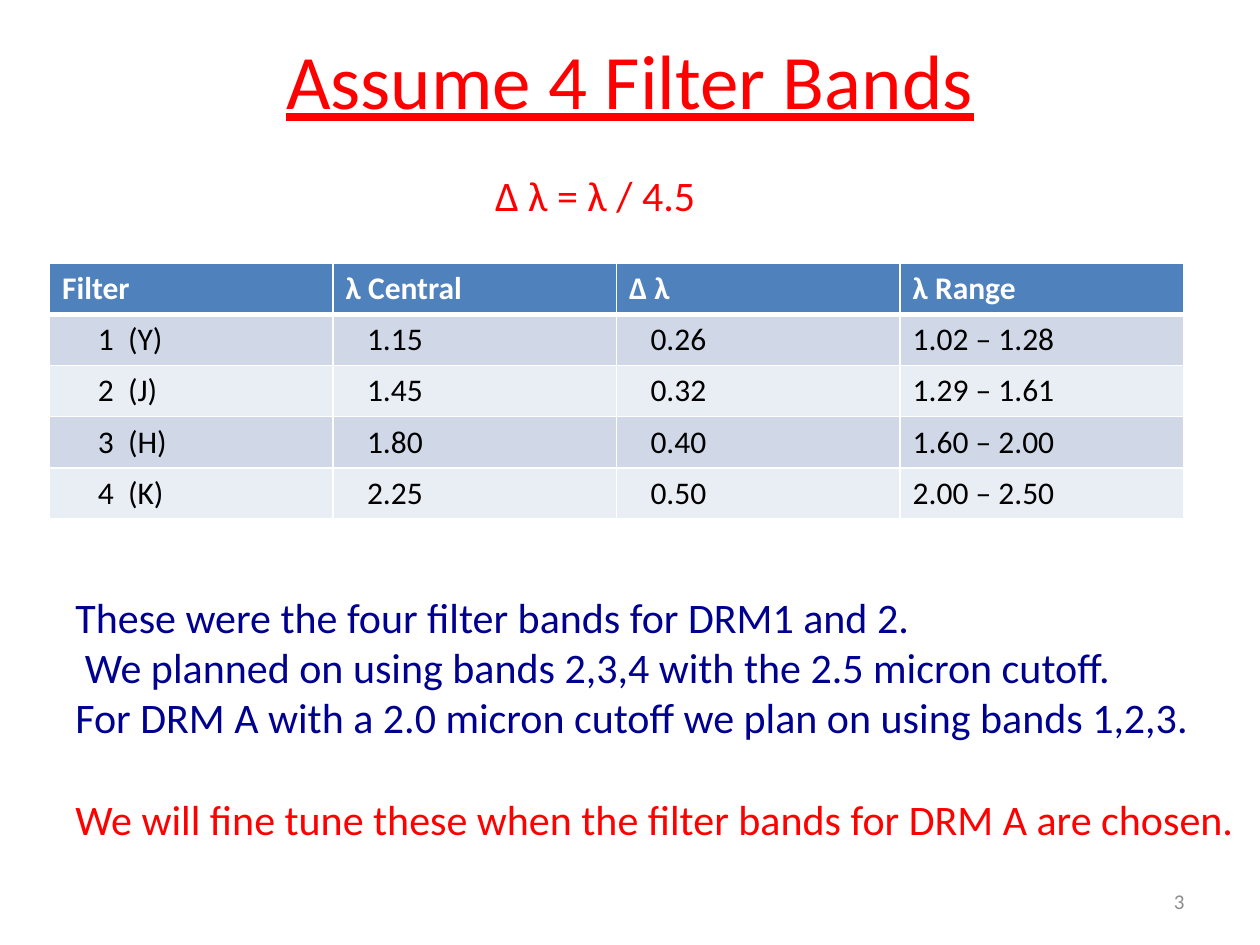
from dataclasses import dataclass

from lxml.etree import SubElement
from pptx import Presentation
from pptx.dml.color import RGBColor
from pptx.enum.text import MSO_ANCHOR, PP_ALIGN
from pptx.oxml.ns import qn
from pptx.util import Cm, Pt


@dataclass(frozen=True)
class Theme:
    """Colours, font and type sizes of the slide."""
    font: str = "Calibri"
    red: str = "FF0000"
    navy: str = "000090"
    grey: str = "8C8C8C"
    black: str = "000000"
    white: str = "FFFFFF"
    header: str = "4F81BD"
    bands: tuple = ("D0D8E8", "E9EDF4")
    title: int = 44
    body: int = 24
    cell: int = 18
    small: int = 12


THEME = Theme()
HEADINGS = ("Filter", "λ Central", "Δ λ", "λ Range")
FILTERS = (
    ("1  (Y)", "1.15", "0.26", "1.02 – 1.28"),
    ("2  (J)", "1.45", "0.32", "1.29 – 1.61"),
    ("3  (H)", "1.80", "0.40", "1.60 – 2.00"),
    ("4  (K)", "2.25", "0.50", "2.00 – 2.50"),
)
INDENTS = (0.72, 0.43, 0.43, 0)
NOTES = (
    ("These were the four filter bands for DRM1 and 2.", THEME.navy, 0, 0),
    ("We planned on using bands 2,3,4 with the 2.5 micron cutoff.", THEME.navy, 0.19, 0),
    ("For DRM A with a 2.0 micron cutoff we plan on using bands 1,2,3.", THEME.navy, 0, 0),
    ("We will fine tune these when the filter bands for DRM A are chosen.", THEME.red, 0, 29.3),
)


def write(p, text, size, color, bold=False, indent=0):
    """Fill a paragraph with one formatted, optionally indented run."""
    p.text = text
    font = p.runs[0].font
    font.name, font.size, font.bold = THEME.font, Pt(size), bold
    font.color.rgb = RGBColor.from_string(color)
    if indent:
        pPr = p._p.get_or_add_pPr()
        pPr.set("marL", str(Cm(indent)))
        pPr.set("indent", "0")


def add_title(s, text):
    """Place and format the title placeholder."""
    sp = s.shapes.title
    sp.left, sp.top, sp.width, sp.height = Cm(1.27), Cm(0), Cm(22.86), Cm(3.17)
    tf = sp.text_frame
    tf.vertical_anchor = MSO_ANCHOR.MIDDLE
    p = tf.paragraphs[0]
    write(p, text, THEME.title, THEME.red)
    p.alignment = PP_ALIGN.CENTER
    p.runs[0].font.underline = True


def add_text(s, left, top, width, height, wrap=False):
    """Add a text box and return its text frame."""
    tf = s.shapes.add_textbox(Cm(left), Cm(top), Cm(width), Cm(height)).text_frame
    tf.word_wrap = wrap
    return tf


def add_notes(s, notes):
    """Add the remarks, one paragraph each."""
    tf = add_text(s, 1.27, 11.79, 24.16, 5.38)
    for i, (text, color, indent, gap) in enumerate(notes):
        p = tf.add_paragraph() if i else tf.paragraphs[0]
        write(p, text, THEME.body, color, indent=indent)
        p.space_before = Pt(gap)


def set_borders(cell, bottom):
    """Draw white cell borders with the given bottom width in points."""
    tcPr = cell._tc.get_or_add_tcPr()
    for i, (side, width) in enumerate(zip("LRTB", (1, 1, 1, bottom))):
        ln = SubElement(tcPr, qn(f"a:ln{side}"), w=str(Pt(width)))
        fill = SubElement(ln, qn("a:solidFill"))
        SubElement(fill, qn("a:srgbClr"), val=THEME.white)
        tcPr.insert(i, ln)


def add_filter_table(s):
    """Add the table of filter bands."""
    rows = (HEADINGS, *FILTERS)
    table = s.shapes.add_table(
        len(rows), len(HEADINGS), Cm(1), Cm(5.31), Cm(22.86), Cm(5.15)).table
    for i, values in enumerate(rows):
        head = i == 0
        fill = THEME.header if head else THEME.bands[(i - 1) % 2]
        for j, text in enumerate(values):
            cell = table.cell(i, j)
            cell.fill.solid()
            cell.fill.fore_color.rgb = RGBColor.from_string(fill)
            write(cell.text_frame.paragraphs[0], text, THEME.cell,
                  THEME.white if head else THEME.black, head, 0 if head else INDENTS[j])
            set_borders(cell, 3 if head else 1)


def add_slide_number(s, number):
    """Add the slide number at the lower right."""
    tf = add_text(s, 18.2, 17.65, 5.93, 1.02, wrap=True)
    tf.vertical_anchor = MSO_ANCHOR.MIDDLE
    p = tf.paragraphs[0]
    write(p, number, THEME.small, THEME.grey)
    p.alignment = PP_ALIGN.RIGHT


def main():
    """Build and save the slide."""
    prs = Presentation()
    prs.slide_width, prs.slide_height = Cm(25.4), Cm(19.05)
    s = prs.slides.add_slide(prs.slide_layouts[5])
    add_title(s, "Assume 4 Filter Bands")
    add_filter_table(s)
    formula = add_text(s, 9.73, 3.3, 4.6, 1.27)
    write(formula.paragraphs[0], "Δ λ = λ / 4.5", THEME.body, THEME.red)
    add_slide_number(s, "3")
    add_notes(s, NOTES)
    prs.save("out.pptx")


if __name__ == "__main__":
    main()
